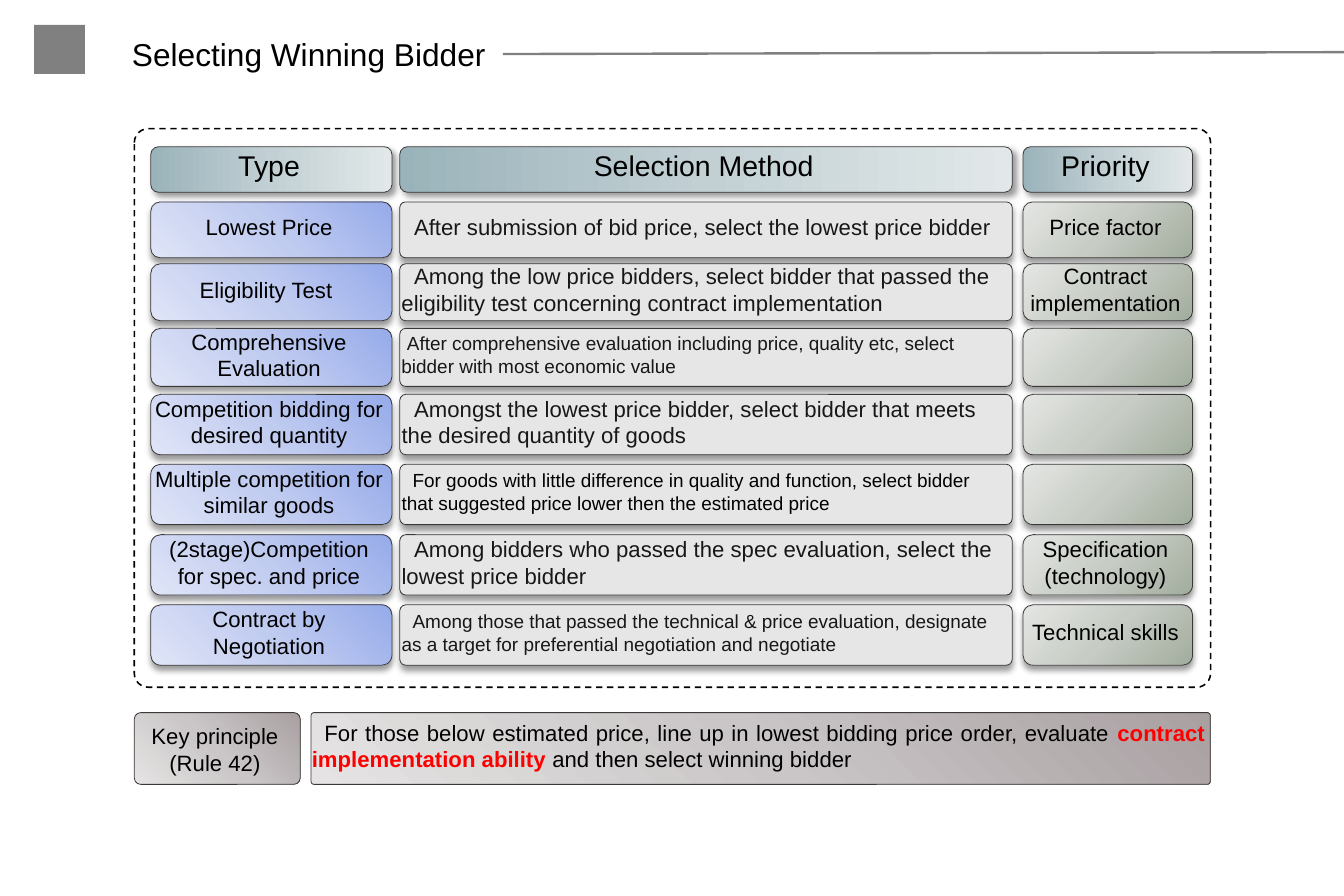
"""Build the slide on how the winning bidder is selected."""
from dataclasses import dataclass

from pptx import Presentation
from pptx.dml.color import RGBColor
from pptx.enum.dml import MSO_LINE
from pptx.enum.shapes import MSO_CONNECTOR, MSO_SHAPE
from pptx.enum.text import MSO_ANCHOR, PP_ALIGN
from pptx.oxml import parse_xml
from pptx.oxml.ns import nsdecls
from pptx.util import Pt


@dataclass(frozen=True)
class Theme:
    font: str = "Arial"
    black: str = "000000"
    ink: str = "181717"
    alert: str = "FF0000"
    gray: str = "808080"
    outline: str = "3B3838"
    plain: str = "E7E6E6"
    teal: tuple = ("9AB3BA", "C2D0D4", "E2E8E9")
    blue: tuple = ("96ABEA", "C0CBF0", "E0E5F7")
    green: tuple = ("A2AD9E", "C7CCC5", "E4E6E3")
    mauve: tuple = ("A9A0A2", "CAC6C7", "E5E3E3")
    title_size: int = 20
    header_size: int = 18
    body_size: int = 14
    small_size: int = 12


THEME = Theme()
SLIDE_SIZE = {"slide_width": Pt(850.38), "slide_height": Pt(567)}
TITLE = "Selecting Winning Bidder"
HEADERS = ("Type", "Selection Method", "Priority")
COLUMNS = ((95.4, 152.6), (253, 387.5), (647.3, 107.3))
HEADER_ROW = (92.9, 28.8)
ROWS = (
    (127.8, 35.3), (167, 36), (207.8, 36.7), (249.6, 38.2),
    (293.8, 38.2), (338.4, 38.2), (382.8, 38.2),
)
CONTENT = (
    ("Lowest Price", "After submission of bid price, select the lowest price bidder ",
     "Price factor", THEME.body_size, THEME.ink, 8),
    ("Eligibility Test ", "Among the low price bidders, select bidder that passed the "
     "eligibility test concerning contract implementation",
     "Contract implementation", THEME.body_size, THEME.ink, 8),
    ("Comprehensive Evaluation", "After comprehensive evaluation including price, quality etc, "
     "select bidder with most economic value",
     "", THEME.small_size, THEME.ink, 3.5),
    ("Competition bidding for desired quantity", "Amongst the lowest price bidder, select bidder "
     "that meets the desired quantity of goods",
     "", THEME.body_size, THEME.ink, 8),
    ("Multiple competition for similar goods", "For goods with little difference in quality and "
     "function, select bidder that suggested price lower then the estimated price",
     "", THEME.small_size, THEME.black, 7),
    ("(2stage)Competition for spec. and price", "Among bidders who passed the spec evaluation, "
     "select the lowest price bidder",
     "Specification\n(technology)", THEME.body_size, THEME.ink, 8),
    ("Contract by Negotiation", "Among those that passed the technical & price evaluation, "
     "designate as a target for preferential negotiation and negotiate",
     "Technical skills", THEME.small_size, THEME.ink, 7),
)
PRINCIPLE = "Key principle\n(Rule 42)"
PRINCIPLE_TEXT = ("For those below estimated price, line up in lowest bidding price order, "
                  "evaluate *contract implementation ability *and then select winning bidder")

BODY_MARGINS = (0, 3.6, 2.9, 7.2)
HEADER_MARGINS = (0, 2.9, 2.9, 8.6)
PRINCIPLE_MARGINS = (0, 3.6, 2.9, 2.9)
LEFT_TO_RIGHT = '<a:lin ang="0" scaled="1"/>'
FROM_CORNER = '<a:path path="circle"><a:fillToRect l="100000" {}="100000"/></a:path>'
FROM_TOP_RIGHT = FROM_CORNER.format("b")
FROM_BOTTOM_RIGHT = FROM_CORNER.format("t")


def assign(target, values):
    for name, value in values.items():
        setattr(target, name, value)


def color(code):
    return RGBColor.from_string(code)


def paint_gradient(shape, colors, direction):
    stops = "".join(
        f'<a:gs pos="{position}"><a:srgbClr val="{code}"/></a:gs>'
        for position, code in zip((0, 50000, 100000), colors)
    )
    shape.fill.background()
    properties = shape._element.spPr
    gradient = parse_xml(
        f'<a:gradFill {nsdecls("a")} rotWithShape="1"><a:gsLst>{stops}</a:gsLst>'
        f"{direction}</a:gradFill>"
    )
    properties.replace(properties.find("{*}noFill"), gradient)


def cast_shadow(shape, angle):
    shape._element.spPr.find("{*}effectLst").append(parse_xml(
        f'<a:outerShdw {nsdecls("a")} blurRad="{Pt(4)}" dist="{Pt(3)}" dir="{angle * 60000}" '
        'algn="t" rotWithShape="0"><a:srgbClr val="000000"><a:alpha val="40000"/>'
        "</a:srgbClr></a:outerShdw>"
    ))


def write(shape, text, size, margins, ink=THEME.black, align=PP_ALIGN.CENTER,
          indent=0, wrap=True):
    frame = shape.text_frame
    sides = ("margin_left", "margin_top", "margin_right", "margin_bottom")
    assign(frame, dict(zip(sides, map(Pt, margins))))
    assign(frame, {"word_wrap": wrap, "vertical_anchor": MSO_ANCHOR.MIDDLE})
    for number, line in enumerate(text.split("\n")):
        paragraph = frame.add_paragraph() if number else frame.paragraphs[0]
        paragraph.alignment = align
        if indent:
            properties = paragraph._p.get_or_add_pPr()
            properties.set("marL", "0")
            properties.set("indent", str(Pt(indent)))
        for part, words in enumerate(line.split("*")):
            run = paragraph.add_run()
            run.text = words
            emphasis = part % 2 == 1
            assign(run.font, {"name": THEME.font, "size": Pt(size), "bold": emphasis})
            run.font.color.rgb = color(THEME.alert if emphasis else ink)


def add_box(slide, column, row, fill, direction=None, radius=0.1667, shadow=None):
    (left, width), (top, height) = column, row
    shape = slide.shapes.add_shape(
        MSO_SHAPE.ROUNDED_RECTANGLE, Pt(left), Pt(top), Pt(width), Pt(height))
    shape.adjustments[0] = radius
    shape.shadow.inherit = False
    shape.line.width = Pt(0.5)
    shape.line.color.rgb = color(THEME.outline)
    if direction:
        paint_gradient(shape, fill, direction)
    else:
        shape.fill.solid()
        shape.fill.fore_color.rgb = color(fill)
    if shadow is not None:
        cast_shadow(shape, shadow)
    return shape


def add_heading(slide):
    title = slide.shapes.title
    assign(title, {"left": Pt(75.6), "top": Pt(18), "width": Pt(242.6), "height": Pt(32.4)})
    write(title, TITLE, THEME.title_size, (7.9, 4.3, 7.9, 4.3), align=PP_ALIGN.LEFT, wrap=False)
    marker = slide.shapes.add_shape(MSO_SHAPE.RECTANGLE, Pt(21.6), Pt(15.8), Pt(32.2), Pt(31))
    marker.shadow.inherit = False
    marker.fill.solid()
    marker.fill.fore_color.rgb = color(THEME.gray)
    marker.line.fill.background()
    rule = slide.shapes.add_connector(
        MSO_CONNECTOR.STRAIGHT, Pt(318.2), Pt(34.2), SLIDE_SIZE["slide_width"], Pt(33))
    rule.begin_connect(title, 3)
    rule.line.width = Pt(1.5)
    rule.line.color.rgb = color(THEME.gray)
    rule._element.spPr.append(parse_xml(f'<a:effectLst {nsdecls("a")}/>'))


def add_methods(slide):
    panel = add_box(slide, (85, 681), (81.4, 353.5), THEME.plain, radius=0.025)
    panel.fill.background()
    assign(panel.line, {"width": Pt(1), "dash_style": MSO_LINE.DASH})
    panel.line.color.rgb = color(THEME.black)
    for column, header in zip(COLUMNS, HEADERS):
        box = add_box(slide, column, HEADER_ROW, THEME.teal, LEFT_TO_RIGHT, shadow=45)
        write(box, header, THEME.header_size, HEADER_MARGINS)
    for row, (kind, method, priority, size, ink, indent) in zip(ROWS, CONTENT):
        kind_box = add_box(slide, COLUMNS[0], row, THEME.blue, FROM_TOP_RIGHT, shadow=90)
        write(kind_box, kind, THEME.body_size, BODY_MARGINS)
        method_box = add_box(slide, COLUMNS[1], row, THEME.plain, radius=0.1, shadow=90)
        write(method_box, method, size, BODY_MARGINS, ink, PP_ALIGN.LEFT, indent)
        priority_box = add_box(slide, COLUMNS[2], row, THEME.green, FROM_BOTTOM_RIGHT, shadow=90)
        if priority:
            write(priority_box, priority, THEME.body_size, BODY_MARGINS)


def add_principle(slide):
    row = (451, 45.4)
    label = add_box(slide, (85, 105), row, THEME.mauve, FROM_TOP_RIGHT, 0.09)
    write(label, PRINCIPLE, THEME.body_size, PRINCIPLE_MARGINS)
    box = add_box(slide, (196.8, 569), row, THEME.mauve, FROM_TOP_RIGHT, 0.04)
    write(box, PRINCIPLE_TEXT, THEME.body_size, BODY_MARGINS,
          align=PP_ALIGN.JUSTIFY, indent=8)


def main():
    presentation = Presentation()
    assign(presentation, SLIDE_SIZE)
    slide = presentation.slides.add_slide(presentation.slide_layouts.get_by_name("Title Only"))
    add_heading(slide)
    add_methods(slide)
    add_principle(slide)
    presentation.save("out.pptx")


if __name__ == "__main__":
    main()
